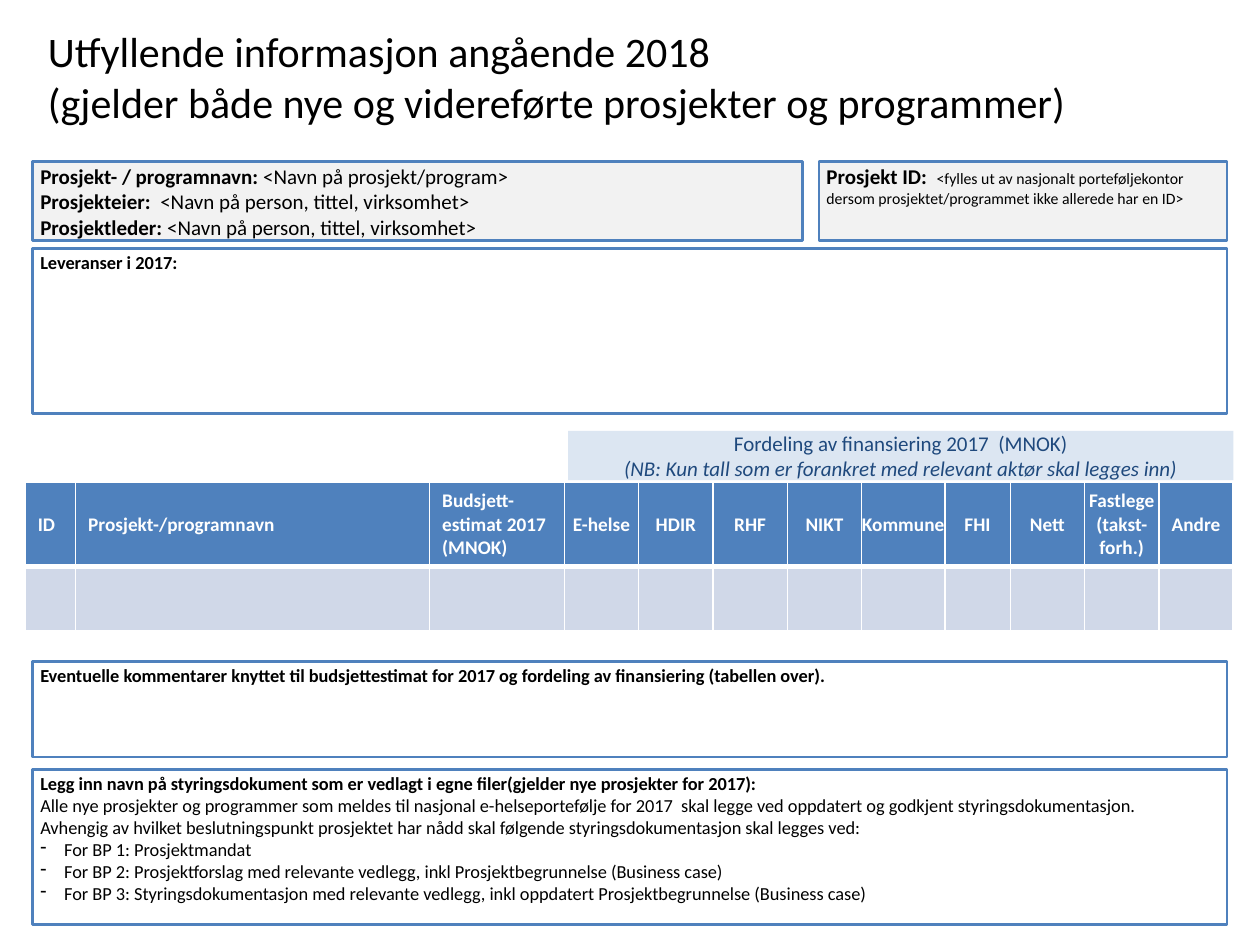
from lxml import etree
from pptx import Presentation
from pptx import util as u
from pptx.dml import color
from pptx.enum import shapes, text
from pptx.oxml import ns

COLORS = {
    "black": "000000", "white": "FFFFFF", "blue": "4F81BD", "navy": "1F497D",
    "grey": "F2F2F2", "pale": "DCE6F2", "row": "D0D8E8",
}
LEFT, CENTER = text.PP_ALIGN.LEFT, text.PP_ALIGN.CENTER
TOP, MIDDLE = text.MSO_ANCHOR.TOP, text.MSO_ANCHOR.MIDDLE


def rgb(name):
    return color.RGBColor.from_string(COLORS[name])


def add_run(p, content, size=10.5, bold=False, italic=False, fill="black", font="Calibri"):
    r = p.add_run()
    r.text = content
    r.font.name, r.font.size = font, u.Pt(size)
    r.font.bold, r.font.italic = bold, italic
    r.font.color.rgb = rgb(fill)


class SlideBuilder:
    def __init__(self, prs):
        self.s = prs.slides.add_slide(prs.slide_layouts[5])

    def title(self, box, lines, size=24):
        sp = self.s.shapes.title
        sp.left, sp.top, sp.width, sp.height = map(u.Inches, box)
        tf = sp.text_frame
        tf.word_wrap, tf.vertical_anchor = True, MIDDLE
        tf.auto_size = text.MSO_AUTO_SIZE.NONE
        p = tf.paragraphs[0]
        p.alignment = LEFT
        for i, line in enumerate(lines):
            if i:
                p.add_line_break()
            add_run(p, line, size=size)

    def box(self, box, paragraphs, fill="white", line="blue", insets=(0.06, 0.02, 0.04, 0),
            align=LEFT, anchor=TOP, bullets_from=None):
        sp = self.s.shapes.add_shape(shapes.MSO_SHAPE.RECTANGLE, *map(u.Inches, box))
        sp.shadow.inherit = False
        sp.fill.solid()
        sp.fill.fore_color.rgb = rgb(fill)
        if line:
            sp.line.color.rgb = rgb(line)
            sp.line.width = u.Pt(1.5)
        else:
            sp.line.fill.background()
        tf = sp.text_frame
        tf.word_wrap, tf.vertical_anchor = True, anchor
        tf.margin_left, tf.margin_top, tf.margin_right, tf.margin_bottom = map(u.Inches, insets)
        for i, runs in enumerate(paragraphs):
            p = tf.add_paragraph() if i else tf.paragraphs[0]
            p.alignment = align
            if bullets_from is not None and i >= bullets_from:
                self.bullet(p)
            for content, style in runs:
                add_run(p, content, **style)

    def bullet(self, p, indent=0.19):
        pPr = p._p.get_or_add_pPr()
        pPr.set("marL", str(u.Inches(indent)))
        pPr.set("indent", str(-u.Inches(indent)))
        etree.SubElement(pPr, ns.qn("a:buChar"), char="-")

    def border(self, cell, side, width):
        ln = etree.SubElement(cell._tc.get_or_add_tcPr(), ns.qn(f"a:ln{side}"), w=str(u.Pt(width)))
        fill = etree.SubElement(ln, ns.qn("a:solidFill"))
        etree.SubElement(fill, ns.qn("a:srgbClr"), val=COLORS["white"])

    def cell(self, cell, fill, borders):
        for side, width in borders.items():
            self.border(cell, side, width)
        cell.fill.solid()
        cell.fill.fore_color.rgb = rgb(fill)
        cell.vertical_anchor = MIDDLE

    def table(self, left, top, headers, widths, heights, centered_from):
        frame = self.s.shapes.add_table(len(heights), len(widths), *map(
            u.Inches, (left, top, sum(widths), sum(heights))))
        tbl = frame.table
        for row, height in zip(tbl.rows, heights):
            row.height = u.Inches(height)
        for i, (header, width) in enumerate(zip(headers, widths)):
            tbl.columns[i].width = u.Inches(width)
            head = tbl.cell(0, i)
            self.cell(head, "blue", {"L": 1, "R": 1, "T": 1, "B": 3})
            p = head.text_frame.paragraphs[0]
            if i >= centered_from:
                head.margin_left = head.margin_right = head.margin_top = head.margin_bottom = 0
                p.alignment = CENTER
            add_run(p, header, size=11, bold=True, fill="white")
            self.cell(tbl.cell(1, i), "row", {"L": 1, "R": 1, "B": 1})


def main():
    prs = Presentation()
    prs.slide_width, prs.slide_height = u.Inches(10), u.Inches(7.5)
    b = SlideBuilder(prs)
    left, width = 0.26, 9.48
    bold, label, value = {"bold": True}, {"size": 12, "bold": True}, {"size": 12}
    band = {"size": 12, "fill": "navy"}

    b.title((0.28, -0.02, 9, 1.25), [
        "Utfyllende informasjon angående 2018",
        "(gjelder både nye og videreførte prosjekter og programmer)"])
    b.box((6.5, 1.28, 3.24, 0.63), [[
        ("Prosjekt ID:  ", label),
        ("<fylles ut av nasjonalt porteføljekontor dersom prosjektet/programmet "
         "ikke allerede har en ID>", {"size": 9})]],
        fill="grey", insets=(0.06, 0.02, 0.1, 0))
    b.box((left, 1.97, width, 1.31), [[("Leveranser i 2017:", bold)]])
    person = "<Navn på person, tittel, virksomhet>"
    b.box((left, 1.28, 6.11, 0.63), [
        [("Prosjekt- / programnavn: ", label), ("<Navn på prosjekt/program>", value)],
        [("Prosjekteier:  ", label), (person, value)],
        [("Prosjektleder: ", label), (person, value)]], fill="grey")
    b.box((left, 6.11, width, 1.23), [
        [("Legg inn navn på styringsdokument som er vedlagt i egne filer"
          "(gjelder nye prosjekter for 2017):", bold)],
        [("Alle nye prosjekter og programmer som meldes til nasjonal e-helseportefølje for 2017  "
          "skal legge ved oppdatert og godkjent styringsdokumentasjon.", {})],
        [("Avhengig av hvilket beslutningspunkt prosjektet har nådd skal følgende "
          "styringsdokumentasjon skal legges ved:", {})],
        [("For BP 1: Prosjektmandat", {})],
        [("For BP 2: Prosjektforslag med relevante vedlegg, inkl Prosjektbegrunnelse "
          "(Business case)", {})],
        [("For BP 3: Styringsdokumentasjon med relevante vedlegg, inkl oppdatert "
          "Prosjektbegrunnelse (Business case)", {})]], bullets_from=3)
    b.table(0.2, 3.83, [
        "ID", "Prosjekt-/programnavn", "Budsjett-estimat 2017 (MNOK)", "E-helse", "HDIR", "RHF",
        "NIKT", "Kommune", "FHI", "Nett", "Fastlege (takst-forh.)", "Andre"],
        [0.4, 2.81, 1.07] + [0.59] * 4 + [0.66, 0.52] + [0.59] * 3,
        [0.63, 0.51], centered_from=3)
    b.box((left, 5.25, width, 0.76), [[
        ("Eventuelle kommentarer knyttet til budsjettestimat for 2017 og fordeling av "
         "finansiering (tabellen over).", bold)]])
    b.box((4.51, 3.42, 5.28, 0.39), [
        [("Fordeling av finansiering 2017  (MNOK)", band)],
        [("(NB: Kun tall som er forankret med relevant aktør skal legges inn)",
          {**band, "italic": True})]],
        fill="pale", line=None, insets=(0.1, 0.05, 0.1, 0.05), align=CENTER, anchor=MIDDLE)
    prs.save("out.pptx")


if __name__ == "__main__":
    main()
